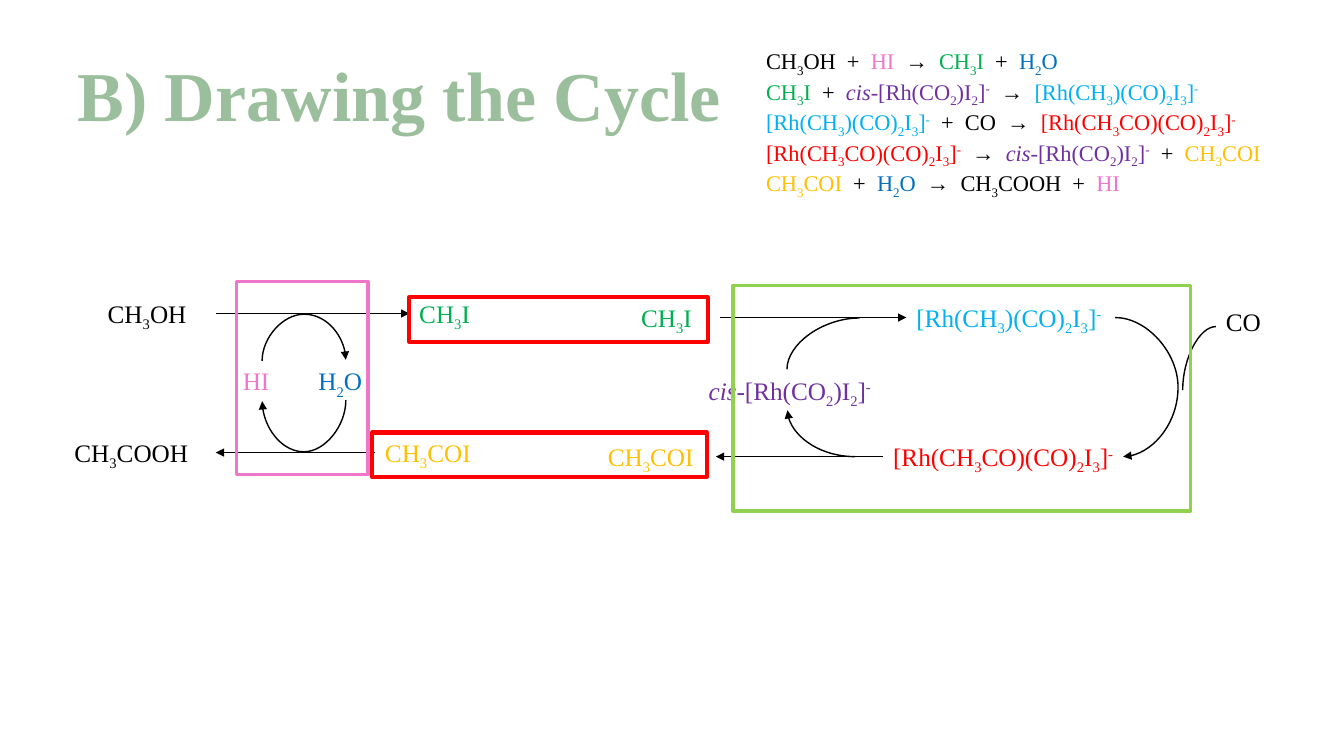
"""Draw the catalytic cycle slide with its reaction list."""
from dataclasses import dataclass
from itertools import groupby
from typing import Any, Iterator, NamedTuple

from lxml import etree
from pptx import Presentation, util as u
from pptx.dml import color
from pptx.enum import shapes, text
from pptx.oxml import ns


@dataclass(frozen=True)
class Theme:
    """Hold colours, font and sizes."""
    font: str = "Times New Roman"
    title: str = "9BBF9C"
    ink: str = "000000"
    pink: str = "F076CA"
    green: str = "00B050"
    blue: str = "0070C0"
    purple: str = "7030A0"
    sky: str = "00B0F0"
    red: str = "FF0000"
    gold: str = "FFC000"
    lime: str = "92D050"
    head: int = 50
    list: int = 16
    label: int = 18
    line: float = 1


class Label(NamedTuple):
    """Place one formula."""
    name: str
    formula: str
    left: float
    top: float
    width: float


class Arrow(NamedTuple):
    """Join two points, with labels at either end."""
    start: tuple[float, float]
    end: tuple[float, float]
    first: str = ""
    last: str = ""


class Curve(NamedTuple):
    """Describe a bent line by its unturned box."""
    box: tuple[float, float, float, float]
    turn: int
    flip: str = ""
    bend: float = 0
    tip: bool = True


class Frame(NamedTuple):
    """Describe an outlined box."""
    box: tuple[float, float, float, float]
    tint: str
    line: float


LOOK = Theme()
METHYL, ACYL, CIS = "[Rh(CH3)(CO)2I3]-", "[Rh(CH3CO)(CO)2I3]-", "cis-[Rh(CO2)I2]-"
TINTS = {"HI": LOOK.pink, "CH3I": LOOK.green, "H2O": LOOK.blue, CIS: LOOK.purple,
         METHYL: LOOK.sky, ACYL: LOOK.red, "CH3COI": LOOK.gold}
STEPS = [
    "CH3OH + HI → CH3I + H2O",
    f"CH3I + {CIS} → {METHYL}",
    f"{METHYL} + CO → {ACYL}",
    f"{ACYL} → {CIS} + CH3COI",
    "CH3COI + H2O → CH3COOH + HI",
]
LABELS = [
    Label("methyl", METHYL, 8.99, 2.95, 2.15),
    Label("gas", "CO", 12.06, 2.99, 0.58),
    Label("acyl", ACYL, 8.76, 4.33, 2.47),
    Label("cis", CIS, 6.93, 3.67, 2.5),
    Label("feed", "CH3I", 6.26, 2.95, 1.17),
    Label("yield", "CH3COI", 5.93, 4.33, 1.17),
    Label("start", "CH3OH", 0.97, 2.91, 1.17),
    Label("made", "CH3I", 4.06, 2.91, 1.17),
    Label("acid", "HI", 2.31, 3.58, 0.58),
    Label("water", "H2O", 3.06, 3.58, 0.75),
    Label("used", "CH3COI", 3.72, 4.29, 1.17),
    Label("end", "CH3COOH", 0.64, 4.29, 1.5),
]
ARROWS = [
    Arrow((7.14, 3.15), (8.99, 3.15), last="methyl"),
    Arrow((8.76, 4.53), (7.1, 4.53), "acyl", "yield"),
    Arrow((2.14, 3.11), (4.06, 3.11), "start", "made"),
    Arrow((3.72, 4.49), (2.14, 4.49), "used", "end"),
]
CURVES = [
    Curve((11.06, 3.15, 0.08, 1.38), 0, bend=7.81),
    Curve((7.81, 4.07, 0.67, 0.46), 180),
    Curve((7.91, 3.05, 0.51, 0.72), 90, "HV", tip=False),
    Curve((11.73, 3.24, 0.33, 0.63), 180, "V", tip=False),
    Curve((3.01, 3.16, 0.01, 0.83), 90, "HV", 47),
    Curve((3.01, 3.56, 0.01, 0.83), 90, "", 52),
]
FRAMES = [
    Frame((7.27, 2.83, 4.54, 2.24), LOOK.lime, 2.25),
    Frame((4.06, 2.95, 2.96, 0.44), LOOK.red, 3),
    Frame((3.69, 4.29, 3.32, 0.44), LOOK.red, 3),
    Frame((2.35, 2.79, 1.3, 1.92), LOOK.pink, 2.25),
]


def add_run(para: Any, words: str, tint: str, size: int, base: int = 0, **extra: bool) -> None:
    """Add one styled run."""
    run = para.add_run()
    run.text = words
    style = {"name": LOOK.font, "size": u.Pt(size), **extra}
    for key, value in style.items():
        setattr(run.font, key, value)
    run.font.color.rgb = color.RGBColor.from_string(tint)
    if base:
        run.font._element.set("baseline", str(base * 1000))


def split(formula: str) -> Iterator[tuple[str, int, bool]]:
    """Yield text, baseline and slant for each part of a formula."""
    if formula.startswith("cis"):
        yield "cis", 0, True
    core = formula.removeprefix("cis").removesuffix("-")
    for low, part in groupby(core, str.isdigit):
        yield "".join(part), -25 if low else 0, False
    if formula.endswith("-"):
        yield "-", 30, False


def add_term(para: Any, formula: str, size: int) -> None:
    """Write one coloured formula."""
    for words, base, slant in split(formula):
        add_run(para, words, TINTS.get(formula, LOOK.ink), size, base, italic=slant)


def add_box(slide: Any, box: tuple[float, float, float, float]) -> Any:
    """Add an empty wrapped text box."""
    shape = slide.shapes.add_textbox(*map(u.Inches, box))
    shape.text_frame.word_wrap = True
    return shape


def add_line(slide: Any, kind: Any, ends: tuple[float, ...], tip: bool = True) -> Any:
    """Add a plain connector, with an arrowhead if wanted."""
    link = slide.shapes.add_connector(kind, *map(u.Inches, ends))
    link.line.width = u.Pt(LOOK.line)
    link.line.color.rgb = color.RGBColor.from_string(LOOK.ink)
    form = link._element.spPr
    if tip:
        etree.SubElement(form.find(ns.qn("a:ln")), ns.qn("a:tailEnd")).set("type", "triangle")
    etree.SubElement(form, ns.qn("a:effectLst"))
    return link


def add_curve(slide: Any, curve: Curve) -> None:
    """Add a turned and flipped curve."""
    left, top, width, height = curve.box
    ends = (left, top, left + width, top + height)
    form = add_line(slide, shapes.MSO_CONNECTOR.CURVE, ends, curve.tip)._element.spPr
    form.xfrm.set("rot", str(curve.turn * 60000))
    for side in curve.flip:
        form.xfrm.set(f"flip{side}", "1")
    shape = form.find(ns.qn("a:prstGeom"))
    shape.set("prst", "curvedConnector3" if curve.bend else "curvedConnector2")
    if curve.bend:
        guide = etree.SubElement(shape.find(ns.qn("a:avLst")), ns.qn("a:gd"))
        guide.set("name", "adj1")
        guide.set("fmla", f"val {round(curve.bend * 100000)}")


def add_frame(slide: Any, frame: Frame) -> None:
    """Add an unfilled outline."""
    shape = slide.shapes.add_shape(shapes.MSO_SHAPE.RECTANGLE, *map(u.Inches, frame.box))
    shape.shadow.inherit = False
    shape.fill.background()
    shape.line.width = u.Pt(frame.line)
    shape.line.color.rgb = color.RGBColor.from_string(frame.tint)


def main() -> None:
    """Build and save the slide."""
    deck = Presentation()
    deck.slide_width, deck.slide_height = u.Inches(13.33), u.Inches(7.5)
    slide = deck.slides.add_slide(deck.slide_layouts[6])
    title = add_box(slide, (0.67, 0.3, 12, 1.25)).text_frame
    title.vertical_anchor = text.MSO_ANCHOR.MIDDLE
    add_run(title.paragraphs[0], "B) Drawing the Cycle", LOOK.title, LOOK.head, bold=True)
    steps = add_box(slide, (7.5, 0.42, 5.33, 1.45)).text_frame
    for row, step in enumerate(STEPS):
        para = steps.add_paragraph() if row else steps.paragraphs[0]
        for term in step.split():
            if term in "+→":
                add_run(para, f"  {term}  ", LOOK.ink, LOOK.list)
            else:
                add_term(para, term, LOOK.list)
    boxes: dict[str, Any] = {}
    for label in LABELS:
        boxes[label.name] = add_box(slide, (label.left, label.top, label.width, 0.4))
        add_term(boxes[label.name].text_frame.paragraphs[0], label.formula, LOOK.label)
    for arrow in ARROWS:
        link = add_line(slide, shapes.MSO_CONNECTOR.STRAIGHT, arrow.start + arrow.end)
        right = arrow.end[0] > arrow.start[0]
        if arrow.first:
            link.begin_connect(boxes[arrow.first], 3 if right else 1)
        if arrow.last:
            link.end_connect(boxes[arrow.last], 1 if right else 3)
    for curve in CURVES:
        add_curve(slide, curve)
    for frame in FRAMES:
        add_frame(slide, frame)
    deck.save("out.pptx")


if __name__ == "__main__":
    main()
